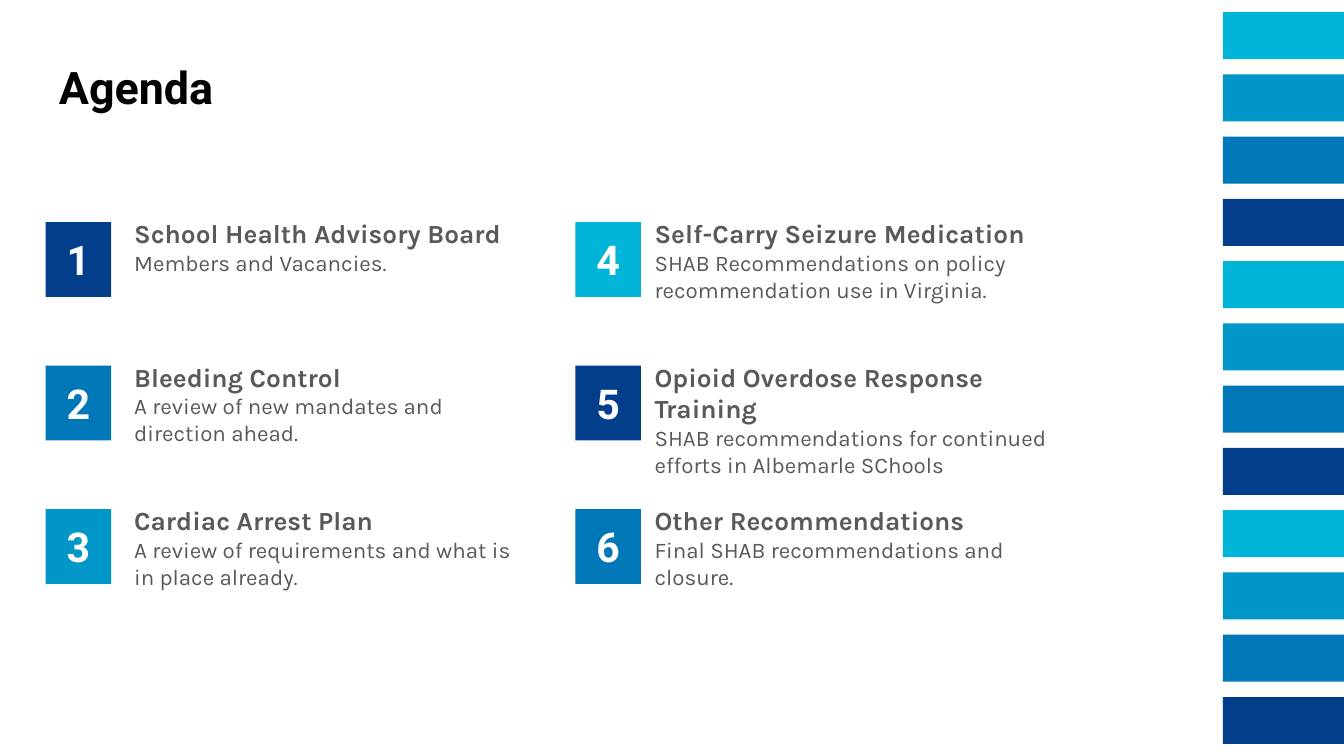
from dataclasses import dataclass

from pptx import Presentation
from pptx.dml.color import RGBColor
from pptx.enum.shapes import MSO_SHAPE
from pptx.enum.text import MSO_ANCHOR, PP_ALIGN
from pptx.util import Pt


@dataclass(frozen=True)
class Theme:
    """Colours, fonts and type sizes of the slide."""

    palette: tuple = ("023E8A", "0077B6", "0096C7", "00B4D8")
    white: str = "FFFFFF"
    title_color: str = "000000"
    body_color: str = "595959"
    display_font: str = "Roboto"
    body_font: str = "Karla"
    title_size: int = 24
    number_size: int = 22
    heading_size: int = 14
    detail_size: int = 12


THEME = Theme()
ROWS = 3
ROW_PITCH = 76.85
INSET = 7.2
BAR_COUNT = 12
BAR_PITCH = 33.36
NUMBER_LEFTS = (24.5, 308.3)
TOPIC_LEFTS = (64.8, 343.6)
TOPIC_WIDTH = 221
WIDE_TOPIC_WIDTH = 246
TOPICS = (
    ("School Health Advisory Board", "Members and Vacancies.", TOPIC_WIDTH),
    ("Bleeding Control", "A review of new mandates and direction ahead.", TOPIC_WIDTH),
    ("Cardiac Arrest Plan", "A review of requirements and what is in place already.", TOPIC_WIDTH),
    ("Self-Carry Seizure Medication",
     "SHAB Recommendations on policy recommendation use in Virginia.", TOPIC_WIDTH),
    ("Opioid Overdose Response Training",
     "SHAB recommendations for continued efforts in Albemarle SChools", WIDE_TOPIC_WIDTH),
    ("Other Recommendations", "Final SHAB recommendations and closure.", TOPIC_WIDTH),
)


def style_font(font, name, size, color, bold=False):
    """Apply typeface, size, colour and weight to a font."""
    font.name = name
    font.size = Pt(size)
    font.bold = bold
    font.color.rgb = RGBColor.from_string(color)


def prepare_frame(frame, anchor):
    """Wrap the text, inset it evenly and return its first paragraph."""
    frame.word_wrap = True
    frame.vertical_anchor = anchor
    frame.margin_left = frame.margin_right = Pt(INSET)
    frame.margin_top = frame.margin_bottom = Pt(INSET)
    return frame.paragraphs[0]


def add_block(slide, left, top, width, height, color):
    """Add a flat rectangle without outline."""
    block = slide.shapes.add_shape(
        MSO_SHAPE.RECTANGLE, Pt(left), Pt(top), Pt(width), Pt(height))
    block.shadow.inherit = False
    block.fill.solid()
    block.fill.fore_color.rgb = RGBColor.from_string(color)
    block.line.fill.background()
    return block


def add_text(slide, left, top, width, anchor):
    """Add a text box and return its first paragraph."""
    box = slide.shapes.add_textbox(Pt(left), Pt(top), Pt(width), Pt(60))
    return prepare_frame(box.text_frame, anchor)


def add_stripes(slide):
    """Stack the coloured bars along the right edge."""
    colors = THEME.palette[::-1]
    for index in range(BAR_COUNT):
        add_block(slide, 655.2, 6.45 + index * BAR_PITCH, 64.8, 25.2,
                  colors[index % len(colors)])


def add_title(slide, text):
    """Add the slide title."""
    title = add_text(slide, 24.5, 7.8, 221, MSO_ANCHOR.BOTTOM)
    title.text = text
    style_font(title.font, THEME.display_font, THEME.title_size, THEME.title_color, True)


def add_number(slide, index, left, top):
    """Add the numbered block of an agenda topic."""
    color = THEME.palette[index % len(THEME.palette)]
    block = add_block(slide, left, top, 35.1, 40.1, color)
    number = prepare_frame(block.text_frame, MSO_ANCHOR.MIDDLE)
    number.text = str(index + 1)
    number.alignment = PP_ALIGN.CENTER
    style_font(number.font, THEME.display_font, THEME.number_size, THEME.white, True)


def add_topic(slide, heading, detail, left, top, width):
    """Add a bold heading with its detail on the following line."""
    topic = add_text(slide, left, top, width, MSO_ANCHOR.TOP)
    topic.space_after = Pt(12)
    style_font(topic.font, THEME.body_font, THEME.detail_size, THEME.body_color)
    heading_run = topic.add_run()
    heading_run.text = heading
    heading_run.font.size = Pt(THEME.heading_size)
    heading_run.font.bold = True
    topic.add_line_break()
    topic.add_run().text = detail


def main():
    """Build and save the agenda slide."""
    deck = Presentation()
    deck.slide_width, deck.slide_height = Pt(720), Pt(405)
    slide = deck.slides.add_slide(deck.slide_layouts[6])
    add_stripes(slide)
    add_title(slide, "Agenda")
    for index, (heading, detail, width) in enumerate(TOPICS):
        column, row = divmod(index, ROWS)
        offset = row * ROW_PITCH
        add_number(slide, index, NUMBER_LEFTS[column], 119 + offset)
        add_topic(slide, heading, detail, TOPIC_LEFTS[column], 109.4 + offset, width)
    deck.save("out.pptx")


if __name__ == "__main__":
    main()
